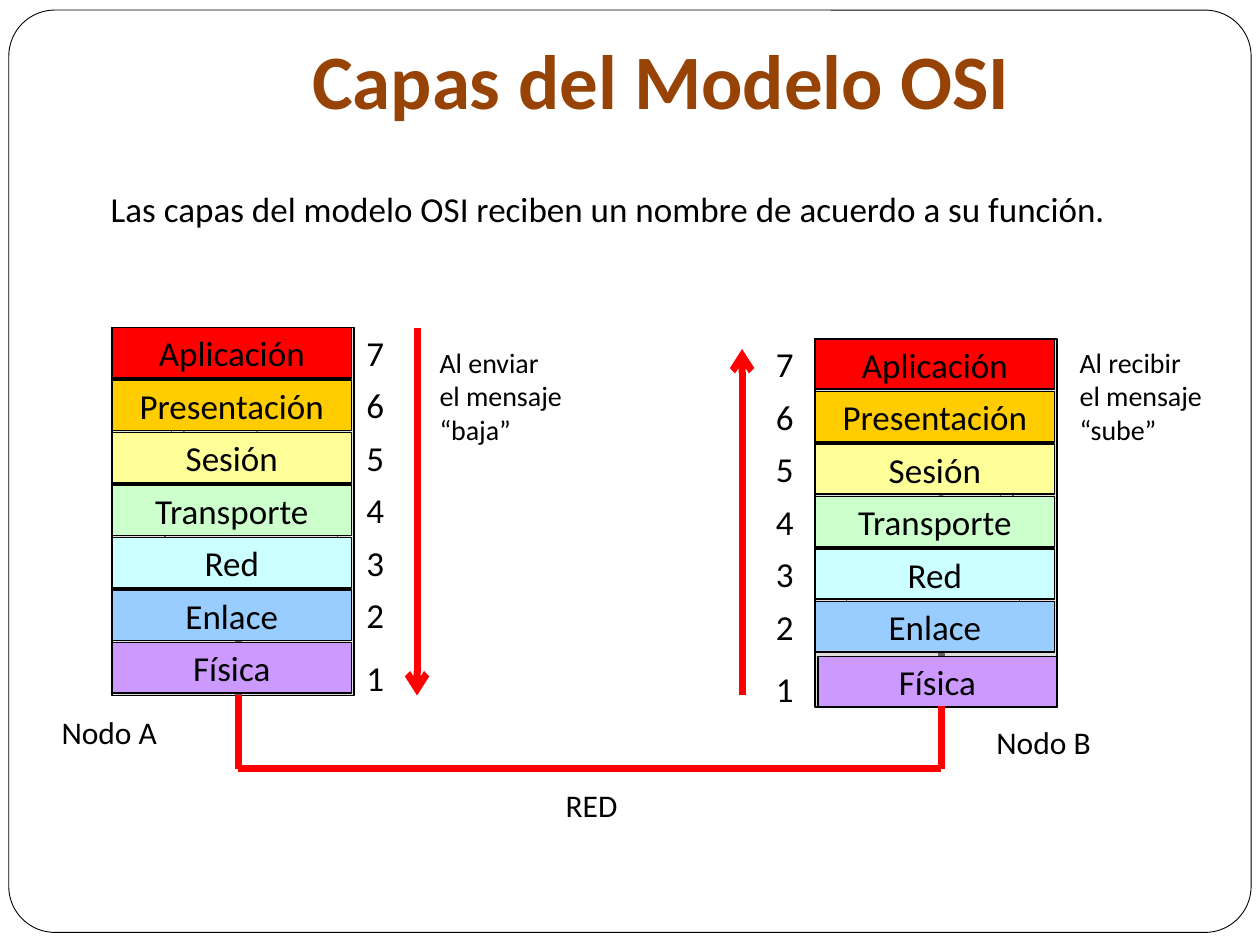
from dataclasses import dataclass

from lxml import etree
from pptx import Presentation
from pptx.dml.color import RGBColor
from pptx.enum import shapes as kinds, text as txt
from pptx.oxml import ns
from pptx.util import Inches, Pt

HUES = {
    "ink": "000000", "paper": "FFFFFF", "title": "964305", "red": "FF0000",
    "panel": "C0C0C0", "Aplicación": "FF0000", "Presentación": "FFCC00",
    "Sesión": "FFFF99", "Transporte": "CCFFCC", "Red": "CCFFFF",
    "Enlace": "99CCFF", "Física": "CC99FF",
}
LAYERS = ["Aplicación", "Presentación", "Sesión", "Transporte", "Red", "Enlace", "Física"]
STEP = 2.5 / 6
FONT = "Calibri"
BUS = 6.1


@dataclass
class Node:
    left: float
    top: float
    count: float
    shift: float
    wire: float
    base: float
    port: float
    neck: float
    cone: float
    desk: float
    roof: float


@dataclass
class Note:
    words: str
    left: float
    top: float
    width: float
    height: float
    size: int = 18
    wrap: bool = False


NODES = [
    Node(0.89, 2.6, 2.81, 0, 1.89, 5.52, 4.27, 1.36, 2.04, 1.31, 3.1),
    Node(6.47, 2.69, 6.06, 0.02, 7.47, 5.6, 4.35, 7.94, 7.36, 6.72, 3.19),
]
NOTES = [
    Note("Al enviar\nel mensaje\n“baja”", 3.39, 2.69, 1.22, 0.91, 16),
    Note("Al recibir\nel mensaje\n“sube”", 8.47, 2.69, 1.22, 0.91, 16),
    Note("RED", 4.39, 6.19, 0.68, 0.4),
    Note("Nodo A", 0.39, 5.61, 1.09, 0.4),
    Note("Nodo B", 7.81, 5.69, 1.07, 0.4),
    Note("Las capas del modelo OSI reciben un nombre de acuerdo a su función.",
         0.78, 1.44, 8.91, 0.44, 20, True),
]


def tint(name: str) -> RGBColor:
    return RGBColor.from_string(HUES[name])


def paint(shape, fill: str, line: float) -> None:
    shape.shadow.inherit = False
    shape.fill.solid()
    shape.fill.fore_color.rgb = tint(fill)
    shape.line.color.rgb = tint("ink")
    shape.line.width = Pt(line)


def style(frame, size: int, hue: str = "ink", bold: bool = False, align=None) -> None:
    for para in frame.paragraphs:
        para.alignment = align
        for run in para.runs:
            run.font.name = FONT
            run.font.size = Pt(size)
            run.font.bold = bold
            run.font.color.rgb = tint(hue)


def box(slide, left: float, top: float, width: float, height: float,
        fill: str, line: float, kind=kinds.MSO_SHAPE.RECTANGLE):
    shape = slide.shapes.add_shape(
        kind, Inches(left), Inches(top), Inches(width), Inches(height))
    paint(shape, fill, line)
    return shape


def write(slide, note: Note):
    field = slide.shapes.add_textbox(
        Inches(note.left), Inches(note.top), Inches(note.width), Inches(note.height))
    frame = field.text_frame
    frame.word_wrap = note.wrap
    frame.text = note.words
    style(frame, note.size)
    return frame


def wire(slide, x1: float, y1: float, x2: float, y2: float,
         hue: str, arrow: bool = False) -> None:
    link = slide.shapes.add_connector(
        kinds.MSO_CONNECTOR.STRAIGHT, Inches(x1), Inches(y1), Inches(x2), Inches(y2))
    link.line.color.rgb = tint(hue)
    link.line.width = Pt(4)
    if arrow:
        etree.SubElement(link.line._get_or_add_ln(), ns.qn("a:tailEnd"), type="arrow")
    etree.SubElement(link._element.spPr, ns.qn("a:effectLst"))


def device(slide, node: Node) -> None:
    box(slide, node.neck, node.roof, 0.1, 0.93, "paper", 0.75)
    edge = node.neck + (0.1 if node.cone > node.neck else 0)
    low = node.roof + 0.93
    spots = [(node.cone, low - 0.23), (node.cone, node.roof + 0.23), (edge, node.roof)]
    pen = slide.shapes.build_freeform(Inches(edge), Inches(low))
    pen.add_line_segments([(Inches(x), Inches(y)) for x, y in spots])
    paint(pen.convert_to_shape(), "paper", 0.75)
    box(slide, node.desk, low, 1.37, 0.69, "paper", 0.75)


def panel(slide, node: Node) -> None:
    back = box(slide, node.left, node.top, 1.92, 2.92, "panel", 1)
    tone = back._element.spPr.find(ns.qn("a:solidFill"))[0]
    etree.SubElement(tone, ns.qn("a:alpha"), val="50000")


def tower(slide, node: Node) -> None:
    for i, name in enumerate(LAYERS):
        last = i == len(LAYERS) - 1
        move = node.shift if last else 0
        top = node.top + i * STEP
        cell = box(slide, node.left + move, top + move, 1.9, 0.4, name, 1)
        frame = cell.text_frame
        frame.text = name
        frame.word_wrap = False
        frame.vertical_anchor = txt.MSO_ANCHOR.MIDDLE
        style(frame, 20, align=txt.PP_ALIGN.CENTER)
        drop = 0.06 if last else -0.02
        write(slide, Note(str(len(LAYERS) - i), node.count, top + drop, 0.37, 0.43, 20))


def main() -> None:
    deck = Presentation()
    deck.slide_width, deck.slide_height = Inches(10), Inches(7.5)
    slide = deck.slides.add_slide(deck.slide_layouts[6])
    border = box(slide, 0.07, 0.08, 9.86, 7.32, "paper", 0.5,
                 kinds.MSO_SHAPE.ROUNDED_RECTANGLE)
    border.adjustments[0] = 0.05

    first, second = NODES
    for node in NODES:
        wire(slide, node.wire, BUS, node.wire, node.port, "ink")
    for draw in (device, panel, tower):
        for node in NODES:
            draw(slide, node)
    for node in NODES:
        wire(slide, node.wire, node.base, node.wire, BUS, "red")
    wire(slide, first.wire, BUS, second.wire, BUS, "red")
    wire(slide, 3.31, 2.6, 3.31, 5.52, "red", True)
    wire(slide, 5.89, 5.52, 5.89, 2.77, "red", True)

    for note in NOTES:
        write(slide, note)
    head = write(slide, Note("Capas del Modelo OSI", 1, -0.16, 8.5, 1.25, 44, True))
    head.vertical_anchor = txt.MSO_ANCHOR.BOTTOM
    head.margin_bottom = Inches(0.1)
    style(head, 44, "title", True, txt.PP_ALIGN.CENTER)
    deck.save("out.pptx")


if __name__ == "__main__":
    main()
